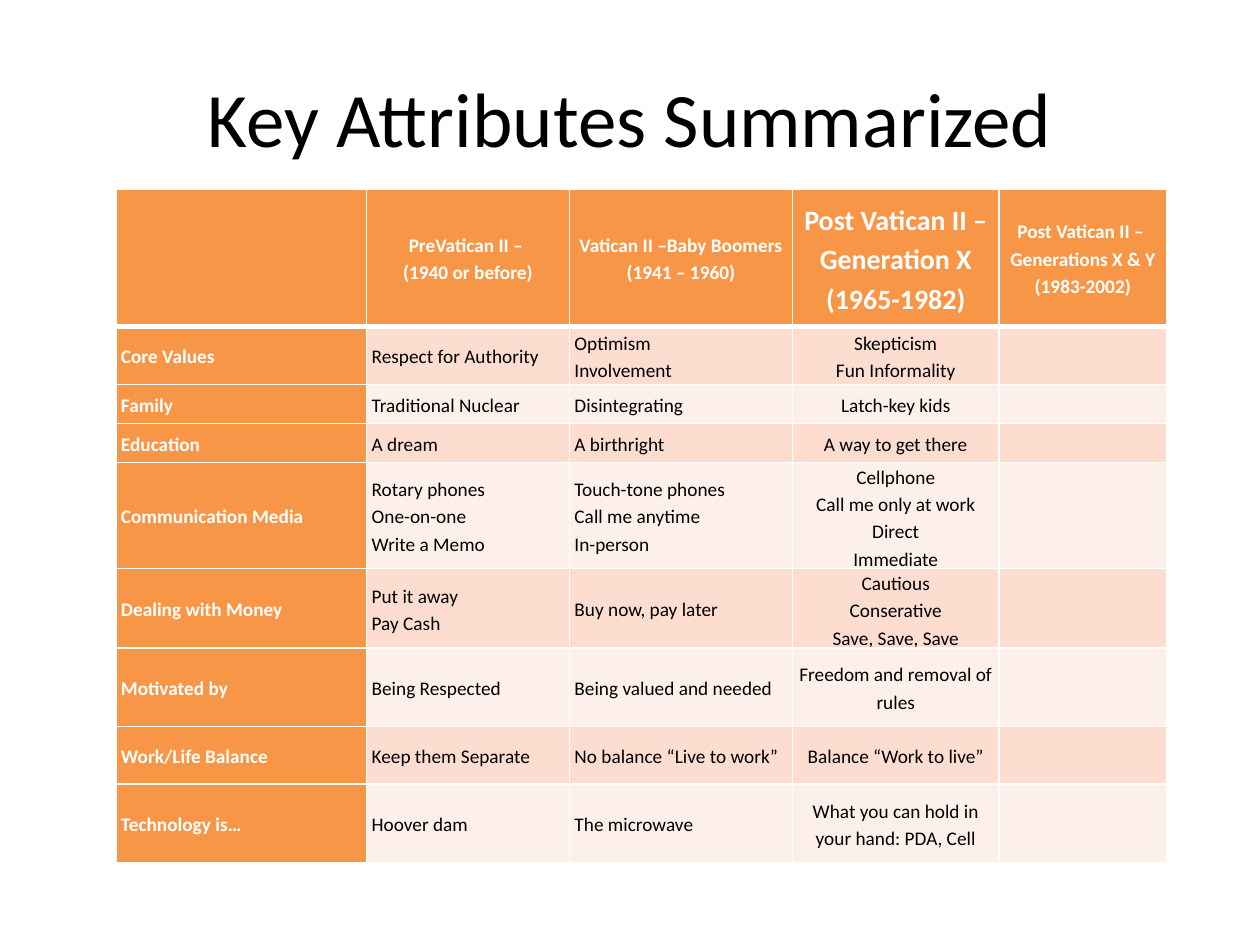
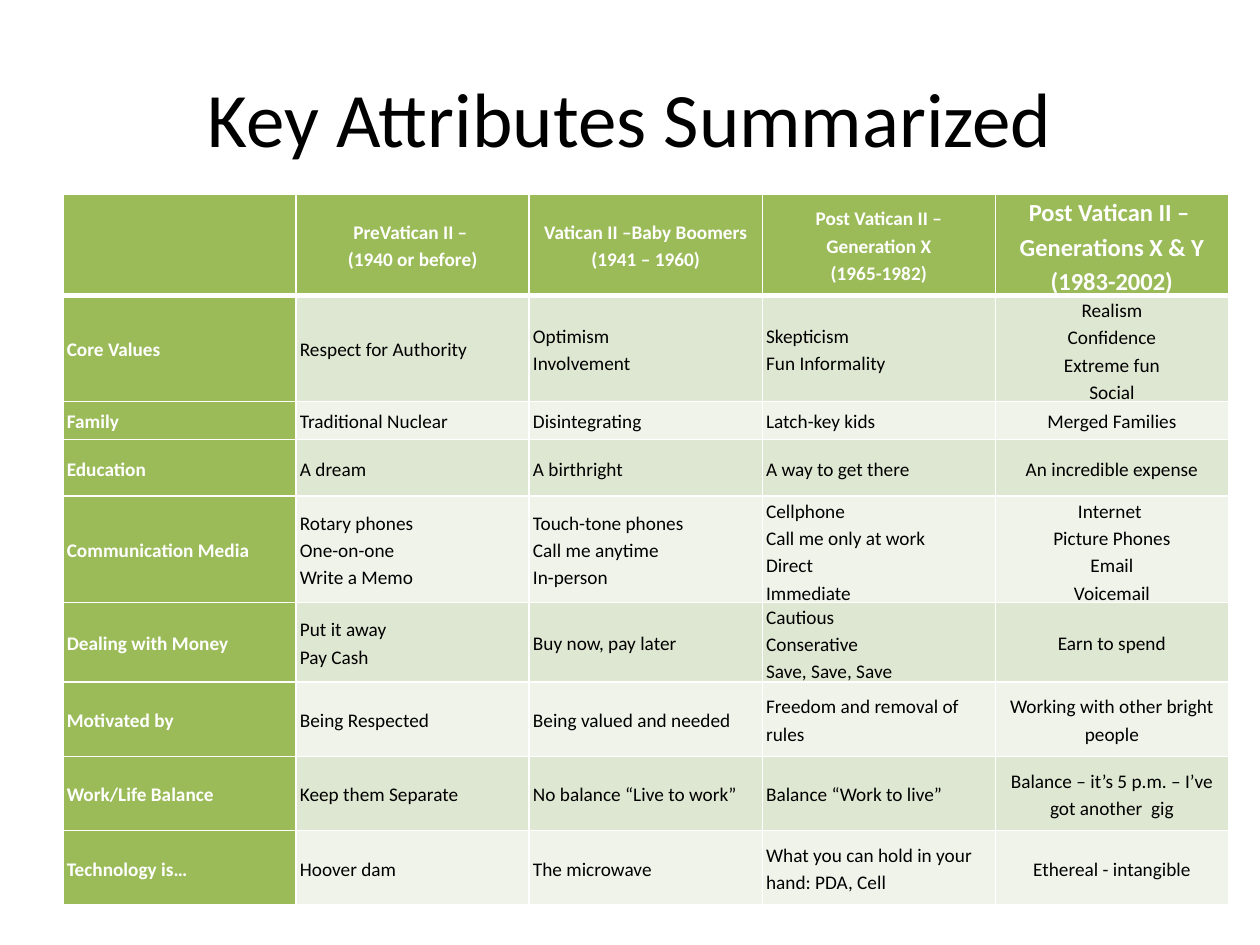
"""Builds two slides that compare generations in a table of key attributes."""
from lxml.etree import SubElement
from pptx import Presentation
from pptx.dml.color import RGBColor
from pptx.enum.text import MSO_ANCHOR, PP_ALIGN
from pptx.oxml.ns import qn
from pptx.util import Inches, Pt

WIDTH, HEIGHT = 10, 7.5
GRID_COLS, GRID_ROWS = 100, 75
FONT, WHITE, BLACK = "Calibri", "FFFFFF", "000000"
TITLE = "Key Attributes Summarized"

HEADERS = [
    "",
    "PreVatican II – \n(1940 or before)",
    "Vatican II –Baby Boomers\n(1941 – 1960)",
    "Post Vatican II –\nGeneration X\n(1965-1982)",
    "Post Vatican II – \nGenerations X & Y\n(1983-2002)",
]
ATTRIBUTES = [
    ["Core Values", "Respect for Authority", "Optimism\nInvolvement",
     "Skepticism\nFun Informality", "Realism\nConfidence\nExtreme fun\nSocial"],
    ["Family", "Traditional Nuclear", "Disintegrating", "Latch-key kids", "Merged Families"],
    ["Education", "A dream", "A birthright", "A way to get there", "An incredible expense"],
    ["Communication Media", "Rotary phones\nOne-on-one\nWrite a Memo",
     "Touch-tone phones\nCall me anytime\nIn-person",
     "Cellphone\nCall me only at work\nDirect\nImmediate",
     "Internet \nPicture Phones\nEmail\nVoicemail"],
    ["Dealing with Money", "Put it away\nPay Cash", "Buy now, pay later",
     "Cautious\nConserative\nSave, Save, Save", "Earn to spend"],
    ["Motivated by", "Being Respected", "Being valued and needed",
     "Freedom and removal of rules", "Working with other bright people"],
    ["Work/Life Balance", "Keep them Separate", "No balance “Live to work”",
     "Balance “Work to live”", "Balance – it’s 5 p.m. – I’ve got another  gig"],
    ["Technology is…", "Hoover dam", "The microwave",
     "What you can hold in your hand: PDA, Cell", "Ethereal - intangible"],
]


def rgb(value):
    return RGBColor.from_string(value)


def write(tf, text, size=11, color=BLACK, bold=False, align=PP_ALIGN.LEFT, spacing=1.0):
    for i, line in enumerate(text.split("\n")):
        p = tf.add_paragraph() if i else tf.paragraphs[0]
        p.alignment, p.line_spacing = align, spacing
        if not line:
            p._p.get_or_add_endParaRPr().set("sz", str(size * 100))
            continue
        r = p.add_run()
        r.text = line
        r.font.name, r.font.size, r.font.bold = FONT, Pt(size), bold
        r.font.color.rgb = rgb(color)


def add_borders(cell, top, bottom):
    tcPr = cell._tc.get_or_add_tcPr()
    for side, width in (("L", 1), ("R", 1), ("T", top), ("B", bottom)):
        ln = SubElement(tcPr, qn(f"a:ln{side}"), w=str(Pt(width)))
        SubElement(SubElement(ln, qn("a:solidFill")), qn("a:srgbClr"), val=WHITE)


class Deck:
    def __init__(self):
        self.prs = Presentation()
        self.prs.slide_width, self.prs.slide_height = Inches(WIDTH), Inches(HEIGHT)
        self.s = None

    def x(self, cols):
        return Inches(cols * WIDTH / GRID_COLS)

    def y(self, rows):
        return Inches(rows * HEIGHT / GRID_ROWS)

    def slide(self):
        self.s = self.prs.slides.add_slide(self.prs.slide_layouts[6])

    def title(self, text):
        sp = self.s.shapes.add_textbox(self.x(5), self.y(3), self.x(90), self.y(12.5))
        tf = sp.text_frame
        tf.word_wrap, tf.vertical_anchor = True, MSO_ANCHOR.MIDDLE
        write(tf, text, size=44, align=PP_ALIGN.CENTER)

    def table(self, left, top, cols, rows, palette, focus, focus_size, inset):
        main, bands = palette[0], palette[1:]
        sp = self.s.shapes.add_table(len(rows), len(cols), self.x(left), self.y(top),
                                     self.x(sum(cols)), self.y(sum(rows)))
        table = sp.table
        table.horz_banding = False
        for column, width in zip(table.columns, cols):
            column.width = self.x(width)
        for row, height in zip(table.rows, rows):
            row.height = self.y(height)
        for i, texts in enumerate([HEADERS] + ATTRIBUTES):
            for j, text in enumerate(texts):
                cell = table.cell(i, j)
                is_label = i == 0 or j == 0
                add_borders(cell, top=3 if i == 1 else 1, bottom=3 if i == 0 else 1)
                cell.fill.solid()
                cell.fill.fore_color.rgb = rgb(main if is_label else bands[(i - 1) % 2])
                cell.vertical_anchor = MSO_ANCHOR.MIDDLE
                cell.margin_left = cell.margin_right = Inches(inset)
                cell.margin_top = cell.margin_bottom = 0
                write(cell.text_frame, text if i == 0 or j <= focus else "",
                      size=focus_size if i == 0 and j == focus else 11,
                      color=WHITE if is_label else BLACK, bold=is_label, spacing=1.15,
                      align=PP_ALIGN.CENTER if i == 0 or j == focus else PP_ALIGN.LEFT)


def main():
    deck = Deck()
    tables = [
        dict(left=9.2, top=15, cols=[19.9, 16.1, 17.7, 16.4, 13.3],
             rows=[10.9, 4.6, 3.1, 3.1, 7.8, 6.2, 6.2, 4.6, 6.2],
             palette=("F79646", "FCDDCF", "FDEFE9"), focus=3, focus_size=16, inset=0.04),
        dict(left=5, top=15.4, cols=[18.5] * 5,
             rows=[7.8, 8.2, 3, 4.5, 8.2, 6.1, 5.9, 5.9, 5.9],
             palette=("9BBB59", "DEE7D1", "EFF3EA"), focus=4, focus_size=14, inset=0.03),
    ]
    for options in tables:
        deck.slide()
        deck.title(TITLE)
        deck.table(**options)
    deck.prs.save("out.pptx")


if __name__ == "__main__":
    main()
